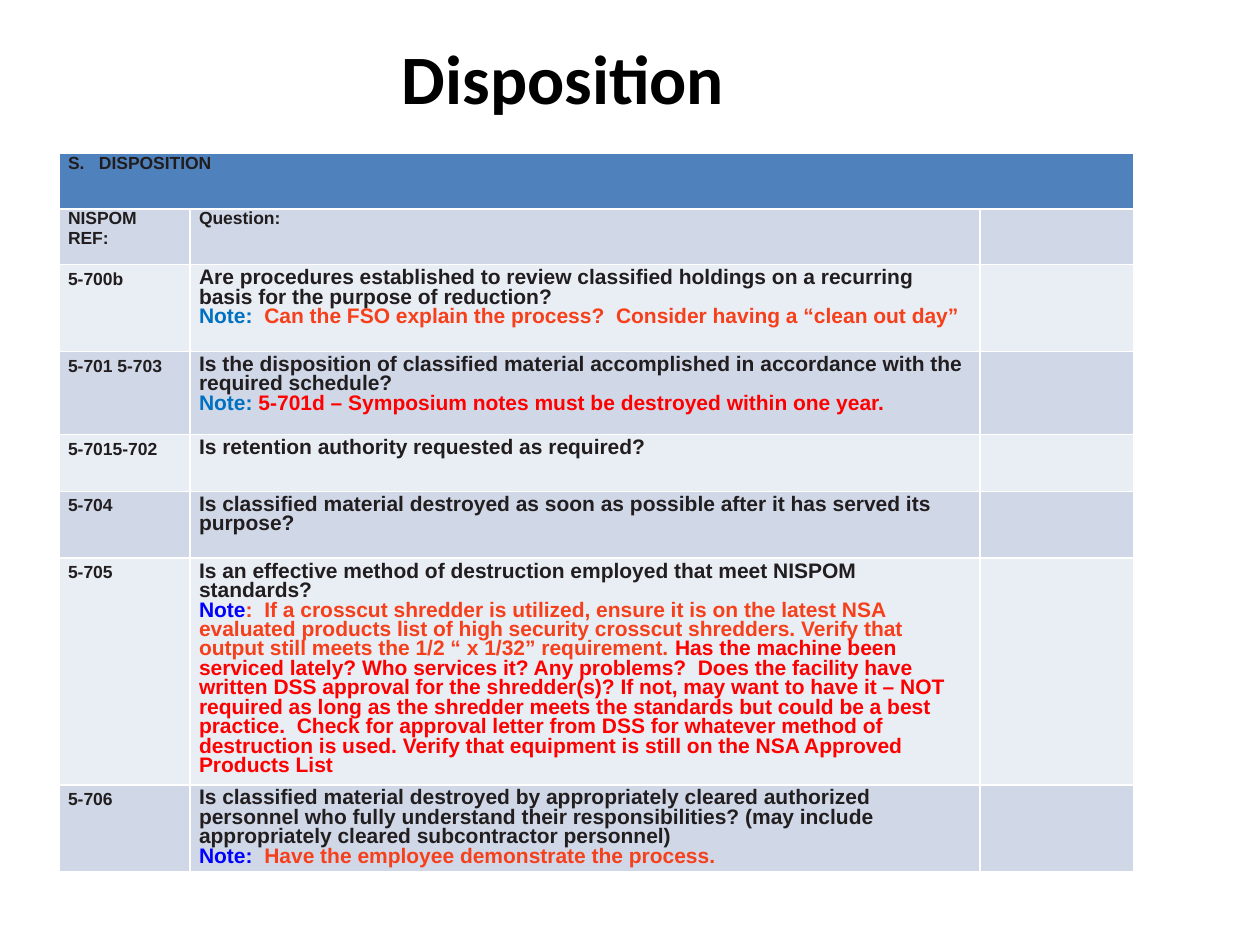
from lxml import etree
from pptx import Presentation
from pptx import util as u
from pptx.dml.color import RGBColor
from pptx.enum import text
from pptx.oxml.ns import qn

COLORS = {
    "title": "000000", "heading": "211D1E", "body": "221E1F",
    "header": "4F81BD", "dark": "D0D8E8", "light": "E9EDF4", "border": "FFFFFF",
    "sky": "0070C0", "blue": "0000FF", "orange": "F63F1B", "red": "FF0000",
}

COLUMN_WIDTHS = [1.04, 6.27, 1.22]
ROW_HEIGHTS = [0.44, 0.44, 0.69, 0.66, 0.45, 0.53, 1.8, 0.69]

# Each row: reference, question, coloured runs of the note
QUESTIONS = [
    ("5-700b",
     "Are procedures established to review classified holdings on a recurring basis "
     "for the purpose of reduction?",
     [("Note:  ", "sky"),
      ("Can the FSO explain the process?  Consider having a “clean out day”", "orange")]),
    ("5-701 5-703",
     "Is the disposition of classified material accomplished in accordance with the "
     "required schedule?",
     [("Note: ", "sky"),
      ("5-701d – Symposium notes must be destroyed within one year.", "red")]),
    ("5-7015-702", "Is retention authority requested as required?", []),
    ("5-704",
     "Is classified material destroyed as soon as possible after it has served its purpose?",
     []),
    ("5-705",
     "Is an effective method of destruction employed that meet NISPOM standards?",
     [("Note", "blue"),
      (":  If a crosscut shredder is utilized, ensure it is on the latest NSA evaluated "
       "products list of high security crosscut shredders. Verify that output still meets "
       "the 1/2 “ x 1/32” requirement. ", "orange"),
      ("Has the machine been serviced lately? Who services it? Any problems?  Does the "
       "facility have written DSS approval for the shredder(s)? If not, may want to have "
       "it – NOT required as long as the shredder meets the standards but could be a best "
       "practice.  Check for approval letter from DSS for whatever method of destruction "
       "is used. Verify that equipment is still on the NSA Approved Products List", "red")]),
    ("5-706",
     "Is classified material destroyed by appropriately cleared authorized personnel who "
     "fully understand their responsibilities? (may include appropriately cleared "
     "subcontractor personnel)",
     [("Note:  ", "blue"), ("Have the employee demonstrate the process.", "orange")]),
]


def rgb(name):
    return RGBColor.from_string(COLORS[name])


def add_run(paragraph, words, color, size, font="Arial"):
    run = paragraph.add_run()
    run.text = words
    run.font.name = font
    run.font.size = u.Pt(size)
    run.font.bold = True
    run.font.color.rgb = rgb(color)


def add_title(slide, left, top, width, height):
    box = slide.shapes.add_textbox(left, top, width, height)
    frame = box.text_frame
    frame.word_wrap = True
    frame.vertical_anchor = text.MSO_ANCHOR.MIDDLE
    paragraph = frame.paragraphs[0]
    paragraph.alignment = text.PP_ALIGN.CENTER
    add_run(paragraph, "Disposition", "title", 39.6, "Calibri")


def style_cell(cell, fill):
    cell.margin_left = cell.margin_right = u.Inches(0.07)
    cell.margin_top = cell.margin_bottom = 0
    cell.fill.solid()
    cell.fill.fore_color.rgb = rgb(fill)
    # Borders come before the fill in the cell properties
    properties = cell._tc.get_or_add_tcPr()
    for position, side in enumerate(("a:lnL", "a:lnR", "a:lnT", "a:lnB")):
        line = etree.Element(qn(side), w=str(u.Pt(1)))
        solid = etree.SubElement(line, qn("a:solidFill"))
        etree.SubElement(solid, qn("a:srgbClr"), val=COLORS["border"])
        properties.insert(position, line)


def write_heading(cell, words):
    paragraph = cell.text_frame.paragraphs[0]
    paragraph.space_before = paragraph.space_after = u.Pt(1)
    add_run(paragraph, words, "heading", 10)


def write_body(cell, paragraphs, size):
    # The tight line spacing needs room above the first line
    cell.margin_top = u.Inches(0.04)
    frame = cell.text_frame
    for index, runs in enumerate(paragraphs):
        paragraph = frame.add_paragraph() if index else frame.paragraphs[0]
        paragraph.line_spacing = u.Pt(11.1)
        for words, color in runs:
            add_run(paragraph, words, color, size)


def add_question_table(slide, left, top, width, height):
    shape = slide.shapes.add_table(len(ROW_HEIGHTS), len(COLUMN_WIDTHS),
                                   left, top, width, height)
    table = shape.table
    for column, size in zip(table.columns, COLUMN_WIDTHS):
        column.width = u.Inches(size)
    for index, (row, size) in enumerate(zip(table.rows, ROW_HEIGHTS)):
        row.height = u.Inches(size)
        fill = "header" if index == 0 else "dark" if index % 2 else "light"
        for cell in row.cells:
            style_cell(cell, fill)

    # Section and column headings
    table.cell(0, 0).merge(table.cell(0, 2))
    write_heading(table.cell(0, 0), "S.   DISPOSITION")
    write_heading(table.cell(1, 0), "NISPOM REF:")
    write_heading(table.cell(1, 1), "Question:")

    # Questions with their notes
    for index, (reference, question, note) in enumerate(QUESTIONS, start=2):
        write_body(table.cell(index, 0), [[(reference, "body")]], 10)
        paragraphs = [[(question, "body")]] + ([note] if note else [])
        write_body(table.cell(index, 1), paragraphs, 12)


def main():
    presentation = Presentation()
    presentation.slide_width = u.Inches(10)
    presentation.slide_height = u.Inches(7.5)
    slide = presentation.slides.add_slide(presentation.slide_layouts[6])
    add_title(slide, u.Inches(0.47), u.Inches(0.32), u.Inches(8), u.Inches(0.58))
    add_question_table(slide, u.Inches(0.47), u.Inches(1.22), u.Inches(8.53), u.Inches(5.7))
    presentation.save("out.pptx")


if __name__ == "__main__":
    main()
